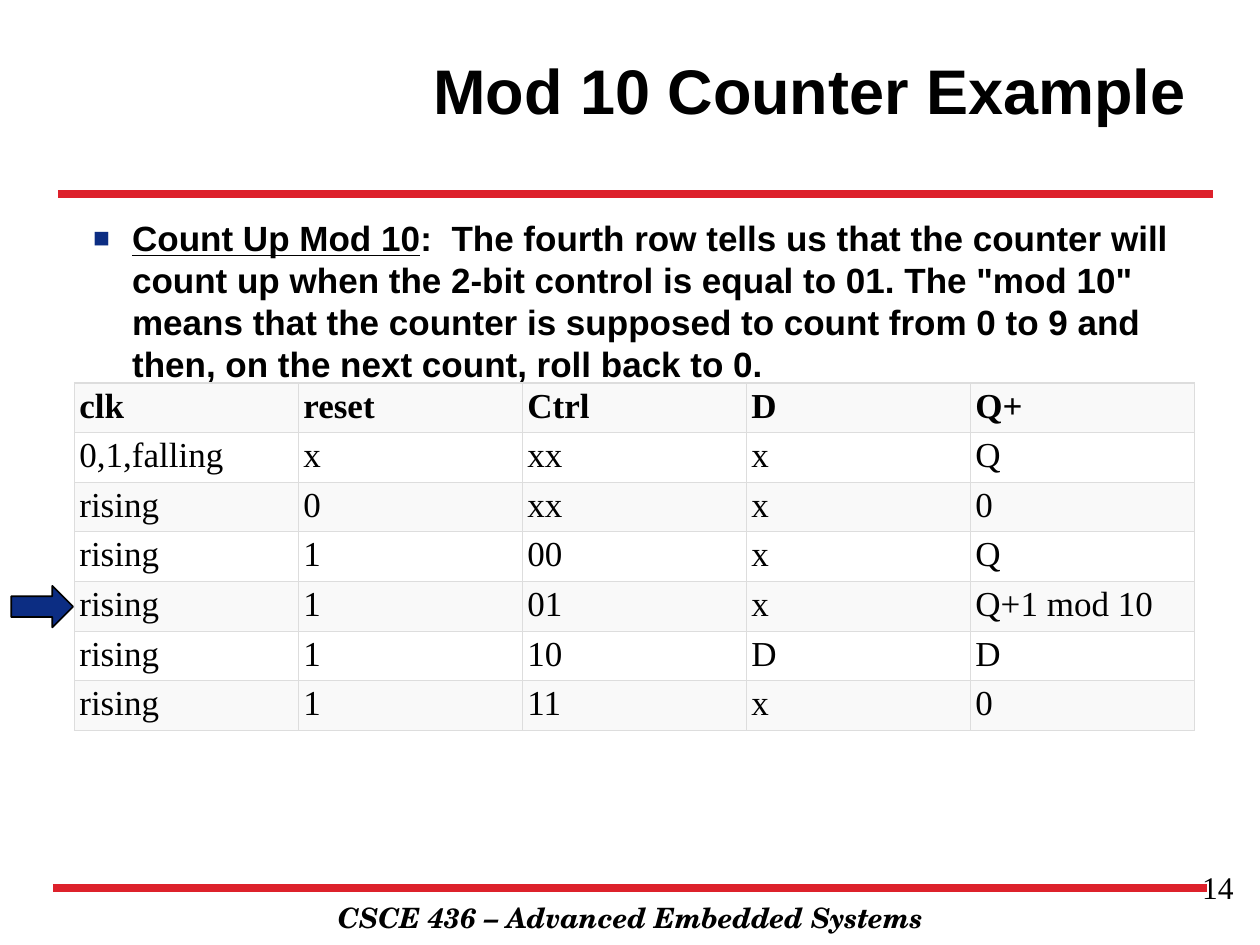
from dataclasses import dataclass
from lxml.etree import SubElement
from pptx import Presentation
from pptx.dml.color import RGBColor
from pptx.enum.shapes import MSO_CONNECTOR, MSO_SHAPE
from pptx.enum.text import MSO_ANCHOR, PP_ALIGN
from pptx.oxml.ns import qn
from pptx.util import Inches, Pt


@dataclass(frozen=True)
class Theme:
    ink: str = "000000"
    red: str = "DD212B"
    blue: str = "0C2D83"
    grid: str = "DDDDDD"
    bands: tuple = ("F9F9F9", "FFFFFF")
    sans: str = "Arial"
    serif: str = "Times New Roman"
    school: str = "TeX Gyre Schola"
    title: int = 36
    body: int = 20
    page: int = 18
    course: int = 16
    rule: float = 4.5
    border: float = 0.75


THEME = Theme()
COLUMNS, ROWS = 100, 75
UNIT = Inches(10) // COLUMNS  # one grid column or row


@dataclass(frozen=True)
class Box:
    """A region of the slide, measured in grid columns and rows."""
    left: float
    top: float
    width: float
    height: float

    def inner(self, left, top, width, height):
        return Box(self.left + left, self.top + top, width, height)

    def lengths(self):
        return [round(value * UNIT)
                for value in (self.left, self.top, self.width, self.height)]


def color(value):
    return RGBColor.from_string(value)


def add_run(paragraph, text, **formats):
    run = paragraph.add_run()
    run.text = text
    run.font.color.rgb = color(THEME.ink)
    for name, value in formats.items():
        setattr(run.font, name, value)


def add_text(slide, box, alignment, anchor=MSO_ANCHOR.TOP):
    frame = slide.shapes.add_textbox(*box.lengths()).text_frame
    frame.word_wrap = True
    frame.vertical_anchor = anchor
    paragraph = frame.paragraphs[0]
    paragraph.alignment = alignment
    return paragraph


def add_rule(slide, box):
    left, top, width, _ = box.lengths()
    rule = slide.shapes.add_connector(
        MSO_CONNECTOR.STRAIGHT, left, top, left + width, top)
    rule.line.color.rgb = color(THEME.red)
    rule.line.width = Pt(THEME.rule)
    SubElement(rule._element.spPr, qn("a:effectLst"))


def add_header(slide, box, title):
    add_rule(slide, box.inner(0, box.height, box.width, 0))
    paragraph = add_text(slide, box.inner(16.3, 0, 74.2, 12.5),
                         PP_ALIGN.RIGHT, MSO_ANCHOR.MIDDLE)
    add_run(paragraph, title, name=THEME.sans, size=Pt(THEME.title), bold=True)


def add_explanation(slide, box, term, text):
    paragraph = add_text(slide, box, PP_ALIGN.LEFT)
    # Hanging square bullet
    properties = paragraph._p.get_or_add_pPr()
    properties.set("marL", str(Inches(0.31)))
    properties.set("indent", str(-Inches(0.31)))
    bullet_color = SubElement(properties, qn("a:buClr"))
    SubElement(bullet_color, qn("a:srgbClr"), val=THEME.blue)
    SubElement(properties, qn("a:buSzPct"), val="80000")
    SubElement(properties, qn("a:buFont"), typeface=THEME.sans)
    SubElement(properties, qn("a:buChar"), char="■")
    formats = dict(name=THEME.sans, size=Pt(THEME.body), bold=True)
    add_run(paragraph, term, underline=True, **formats)
    add_run(paragraph, text, **formats)


def add_borders(cell):
    properties = cell._tc.get_or_add_tcPr()
    for position, side in enumerate(("a:lnL", "a:lnR", "a:lnT", "a:lnB")):
        line = properties.makeelement(qn(side), {"w": str(Pt(THEME.border))})
        fill = SubElement(line, qn("a:solidFill"))
        SubElement(fill, qn("a:srgbClr"), val=THEME.grid)
        properties.insert(position, line)


def add_truth_table(slide, box, rows):
    row_count, column_count = len(rows), len(rows[0])
    table = slide.shapes.add_table(
        row_count, column_count, *box.lengths()).table
    for column in table.columns:
        column.width = round(box.width * UNIT / column_count)
    margins = dict(margin_left=0.04, margin_right=0.04,
                   margin_top=0.03, margin_bottom=0.03)
    for row_index, values in enumerate(rows):
        table.rows[row_index].height = round(box.height * UNIT / row_count)
        for column_index, text in enumerate(values):
            cell = table.cell(row_index, column_index)
            for name, inches in margins.items():
                setattr(cell, name, Inches(inches))
            cell.fill.solid()
            cell.fill.fore_color.rgb = color(THEME.bands[row_index % 2])
            add_borders(cell)
            add_run(cell.text_frame.paragraphs[0], text, name=THEME.serif,
                    size=Pt(THEME.body), bold=row_index == 0)


def add_row_arrow(slide, box):
    arrow = slide.shapes.add_shape(MSO_SHAPE.RIGHT_ARROW, *box.lengths())
    arrow.shadow.inherit = False
    arrow.fill.solid()
    arrow.fill.fore_color.rgb = color(THEME.blue)
    arrow.line.color.rgb = color(THEME.ink)
    arrow.line.width = Pt(1)


def add_counter_table(slide, box, rows):
    # The arrow stands in the margin left of the table
    add_truth_table(slide, box.inner(5, 0, box.width - 5, box.height), rows)
    add_row_arrow(slide, box.inner(0, 16.1, 4.9, 3.3))


def add_footer(slide, box, course, page):
    add_rule(slide, box.inner(0, 2.1, 91.6, 0))
    paragraph = add_text(slide, box.inner(10, 2.6, 71.7, 3.7), PP_ALIGN.CENTER)
    add_run(paragraph, course, name=THEME.school, size=Pt(THEME.course),
            bold=True, italic=True)
    paragraph = add_text(slide, box.inner(71.4, 0, 23.3, 5.2), PP_ALIGN.RIGHT)
    add_run(paragraph, page, name=THEME.serif, size=Pt(THEME.page))


def main():
    presentation = Presentation()
    presentation.slide_width = COLUMNS * UNIT
    presentation.slide_height = ROWS * UNIT
    slide = presentation.slides.add_slide(presentation.slide_layouts[6])

    add_header(slide, Box(4.6, 0.8, 91.7, 14.6), "Mod 10 Counter Example")
    add_explanation(
        slide, Box(6.4, 16.7, 88.9, 47.3), "Count Up Mod 10",
        ":  The fourth row tells us that the counter will count up when the "
        "2-bit control is equal to 01. The \"mod 10\" means that the counter "
        "is supposed to count from 0 to 9 and then, on the next count, roll "
        "back to 0.")
    add_counter_table(slide, Box(0.9, 30.4, 93.9, 25.9), [
        ("clk", "reset", "Ctrl", "D", "Q+"),
        ("0,1,falling", "x", "xx", "x", "Q"),
        ("rising", "0", "xx", "x", "0"),
        ("rising", "1", "00", "x", "Q"),
        ("rising", "1", "01", "x", "Q+1 mod 10"),
        ("rising", "1", "10", "D", "D"),
        ("rising", "1", "11", "x", "0"),
    ])
    add_footer(slide, Box(4.2, 68.4, 94.7, 6.3),
               "CSCE 436 – Advanced Embedded Systems", "14")
    presentation.save("out.pptx")


if __name__ == "__main__":
    main()
